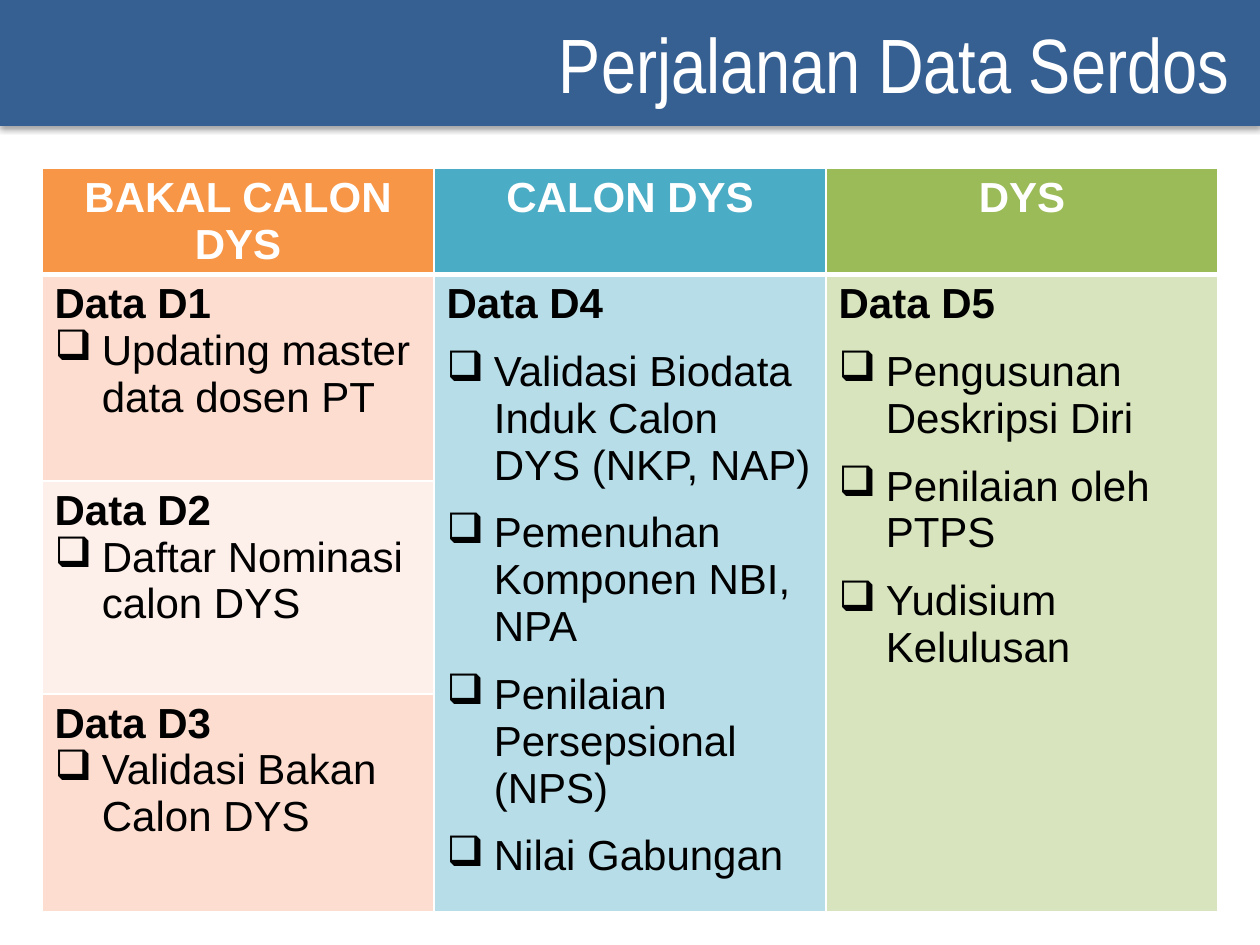
import pptx
import pptx.util
import pptx.dml.color
import pptx.enum.shapes
import pptx.enum.text
import pptx.oxml
import pptx.oxml.ns
import lxml.etree

THEME = {
    "banner": "376092",
    "white": "FFFFFF",
    "black": "000000",
    "headers": ["F79646", "4BACC6", "9BBB59"],
    "stages": ["FCDDCF", "FDEFE9", "FCDDCF"],
    "calon": "B7DEE8",
    "dys": "D7E4BD",
    "title_font": "Arial Narrow",
    "table_font": "Arial",
    "title_size": pptx.util.Pt(44),
    "table_size": pptx.util.Pt(24),
}
ALIGN = pptx.enum.text.PP_ALIGN
NAMESPACE = pptx.oxml.ns.nsdecls("a")


def style_paragraph(paragraph, font_name, size, color, bold, alignment):
    paragraph.alignment = alignment
    paragraph.font.name = font_name
    paragraph.font.size = size
    paragraph.font.bold = bold
    paragraph.font.color.rgb = pptx.dml.color.RGBColor.from_string(color)


def fill_cell(cell, lines, fill, color, alignment, space_after):
    cell.fill.solid()
    cell.fill.fore_color.rgb = pptx.dml.color.RGBColor.from_string(fill)
    cell.text = "\n".join(lines)
    for index, paragraph in enumerate(cell.text_frame.paragraphs):
        style_paragraph(paragraph, THEME["table_font"], THEME["table_size"], color, index == 0, alignment)
        paragraph.space_after = pptx.util.Pt(space_after)
        if index:
            properties = paragraph._p.get_or_add_pPr()
            indent = pptx.util.Inches(0.375)
            properties.set("marL", str(indent))
            properties.set("indent", str(-indent))
            bullet = lxml.etree.SubElement(properties, pptx.oxml.ns.qn("a:buChar"))
            bullet.set("char", "❑")


presentation = pptx.Presentation()
presentation.slide_width = pptx.util.Inches(10)
presentation.slide_height = pptx.util.Inches(7.5)
slide = presentation.slides.add_slide(presentation.slide_layouts[6])
unit = presentation.slide_width / 30

banner = slide.shapes.add_shape(
    pptx.enum.shapes.MSO_SHAPE.RECTANGLE, 0, 0, presentation.slide_width, int(3 * unit)
)
banner.fill.solid()
banner.fill.fore_color.rgb = pptx.dml.color.RGBColor.from_string(THEME["banner"])
banner.line.fill.background()
banner.shadow.inherit = False
banner._element.spPr.find(pptx.oxml.ns.qn("a:effectLst")).append(pptx.oxml.parse_xml(
    f'<a:outerShdw {NAMESPACE} blurRad="{pptx.util.Pt(3.1)}" dist="{pptx.util.Pt(1.8)}" '
    f'dir="5400000" rotWithShape="0"><a:srgbClr val="{THEME["black"]}">'
    '<a:alpha val="35000"/></a:srgbClr></a:outerShdw>'
))
banner.text_frame.word_wrap = True
banner.text_frame.vertical_anchor = pptx.enum.text.MSO_ANCHOR.MIDDLE
banner.text_frame.text = "Perjalanan Data Serdos "
style_paragraph(
    banner.text_frame.paragraphs[0], THEME["title_font"], THEME["title_size"], THEME["white"], False, ALIGN.RIGHT
)

headers = ["BAKAL CALON DYS", "CALON DYS", "DYS"]
stages = [
    ["Data D1", "Updating master data dosen PT"],
    ["Data D2", "Daftar Nominasi calon DYS"],
    ["Data D3", "Validasi Bakan Calon DYS"],
]
calon_lines = [
    "Data D4",
    "Validasi Biodata Induk Calon DYS (NKP, NAP)",
    "Pemenuhan Komponen NBI, NPA",
    "Penilaian Persepsional (NPS)",
    "Nilai Gabungan",
]
dys_lines = ["Data D5", "Pengusunan Deskripsi Diri", "Penilaian oleh PTPS", "Yudisium Kelulusan"]
row_units = [1.77, 4.92, 5.07, 5.18]

table = slide.shapes.add_table(
    4, 3, int(unit), int(4 * unit), int(28 * unit), int(sum(row_units) * unit)
).table
for column in table.columns:
    column.width = int(28 * unit / 3)
for row, height in zip(table.rows, row_units):
    row.height = int(height * unit)

for column_index, (header, fill) in enumerate(zip(headers, THEME["headers"])):
    fill_cell(table.cell(0, column_index), [header], fill, THEME["white"], ALIGN.CENTER, 0)
for row_index, (lines, fill) in enumerate(zip(stages, THEME["stages"]), start=1):
    fill_cell(table.cell(row_index, 0), lines, fill, THEME["black"], ALIGN.LEFT, 0)
for column_index, lines, fill in [(1, calon_lines, THEME["calon"]), (2, dys_lines, THEME["dys"])]:
    table.cell(1, column_index).merge(table.cell(3, column_index))
    fill_cell(table.cell(1, column_index), lines, fill, THEME["black"], ALIGN.LEFT, 12)

for row_index in range(4):
    for column_index in range(3):
        properties = table.cell(row_index, column_index)._tc.get_or_add_tcPr()
        for position, side in enumerate(["L", "R", "T", "B"]):
            heavy = (row_index, side) in [(0, "B"), (1, "T")]
            properties.insert(position, pptx.oxml.parse_xml(
                f'<a:ln{side} {NAMESPACE} w="{pptx.util.Pt(3 if heavy else 1)}"><a:solidFill>'
                f'<a:srgbClr val="{THEME["white"]}"/></a:solidFill></a:ln{side}>'
            ))

presentation.save("out.pptx")
